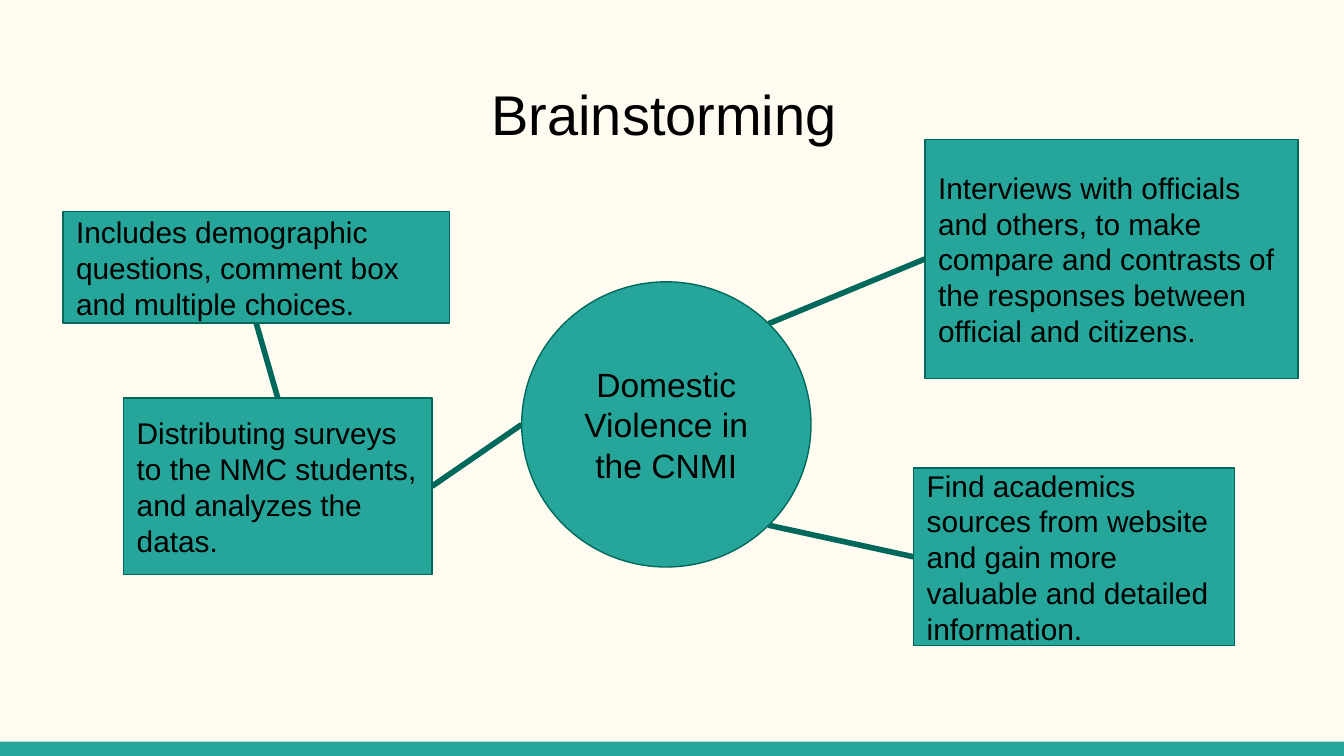
from math import sqrt

from lxml.etree import SubElement
from pptx import Presentation
from pptx.dml.color import RGBColor
from pptx.enum.shapes import MSO_CONNECTOR, MSO_SHAPE
from pptx.enum.text import MSO_ANCHOR as ANCHOR, PP_ALIGN as ALIGN
from pptx.oxml.ns import qn
from pptx.util import Pt

TITLE = "Brainstorming"
CREAM, TEAL, DARK_TEAL, BLACK = "FFFBF0", "26A69A", "00695C", "000000"
WIDTH, HEIGHT, BAR_HEIGHT = 720, 405, 7.6
TITLE_BOX = (24.5, 35.3, 671, 48.2)

# name: (text, (left, top, width, height))
IDEAS = {
    "topic": ("Domestic Violence in the CNMI", (279.5, 151, 155, 152.8)),
    "surveys": ("Distributing surveys to the NMC students, and analyzes the datas.",
                (66.2, 213.2, 165.2, 94.7)),
    "interviews": ("Interviews with officials and others, to make compare and contrasts "
                   "of the responses between official and citizens.",
                   (495.5, 74.8, 200, 127.9)),
    "sources": ("Find academics sources from website and gain more valuable and "
                "detailed information.", (489.4, 250.8, 172, 95)),
    "questions": ("Includes demographic questions, comment box and multiple choices.",
                  (33.7, 113.5, 207.2, 59.7)),
}

# Points on a box as fractions of its width and height
NEAR, FAR = 0.5 - sqrt(2) / 4, 0.5 + sqrt(2) / 4
LEFT, RIGHT, TOP, BOTTOM = (0, 0.5), (1, 0.5), (0.5, 0), (0.5, 1)
UPPER_RIGHT, LOWER_RIGHT = (FAR, NEAR), (FAR, FAR)
LINKS = [
    ("topic", LEFT, "surveys", RIGHT),
    ("topic", UPPER_RIGHT, "interviews", LEFT),
    ("topic", LOWER_RIGHT, "sources", LEFT),
    ("surveys", TOP, "questions", BOTTOM),
]


def rgb(value):
    return RGBColor.from_string(value)


def points(values):
    return [Pt(value) for value in values]


def write(shape, text, size, align, anchor):
    frame = shape.text_frame
    margins = dict.fromkeys(
        ("margin_left", "margin_top", "margin_right", "margin_bottom"), Pt(7.2))
    for name, value in {**margins, "word_wrap": True, "vertical_anchor": anchor}.items():
        setattr(frame, name, value)
    paragraph = frame.paragraphs[0]
    paragraph.text = text
    paragraph.alignment = align
    font = paragraph.runs[0].font
    for name, value in {"name": "Arial", "size": Pt(size)}.items():
        setattr(font, name, value)
    font.color.rgb = rgb(BLACK)


def add_filled(slide, kind, box):
    shape = slide.shapes.add_shape(kind, *points(box))
    shape.shadow.inherit = False
    shape.fill.solid()
    shape.fill.fore_color.rgb = rgb(TEAL)
    return shape


def set_line(line, width):
    line.color.rgb = rgb(DARK_TEAL)
    line.width = Pt(width)


def site(name, fraction):
    """Return the place on an idea's box where a link ends."""
    left, top, width, height = IDEAS[name][1]
    return left + fraction[0] * width, top + fraction[1] * height


def add_link(slide, start, end):
    connector = slide.shapes.add_connector(
        MSO_CONNECTOR.STRAIGHT, *points(start + end))
    set_line(connector.line, 3)
    SubElement(connector._element.spPr, qn("a:effectLst"))


def add_idea(slide, name, text, box):
    is_topic = name == "topic"
    shape = add_filled(slide, MSO_SHAPE.OVAL if is_topic else MSO_SHAPE.RECTANGLE, box)
    set_line(shape.line, 0.75)
    write(shape, text, 18 if is_topic else 16,
          ALIGN.CENTER if is_topic else ALIGN.LEFT, ANCHOR.MIDDLE)


def main():
    presentation = Presentation()
    presentation.slide_width, presentation.slide_height = points((WIDTH, HEIGHT))
    slide = presentation.slides.add_slide(presentation.slide_layouts[5])
    slide.background.fill.solid()
    slide.background.fill.fore_color.rgb = rgb(CREAM)

    bar = add_filled(slide, MSO_SHAPE.RECTANGLE,
                     (0, HEIGHT - BAR_HEIGHT, WIDTH, BAR_HEIGHT))
    bar.line.fill.background()

    title = slide.shapes.title
    title.left, title.top, title.width, title.height = points(TITLE_BOX)
    write(title, TITLE + " ", 30, ALIGN.CENTER, ANCHOR.TOP)

    for start, start_site, end, end_site in LINKS:
        add_link(slide, site(start, start_site), site(end, end_site))
    for name, (text, box) in IDEAS.items():
        add_idea(slide, name, text, box)
    presentation.save("out.pptx")


if __name__ == "__main__":
    main()
